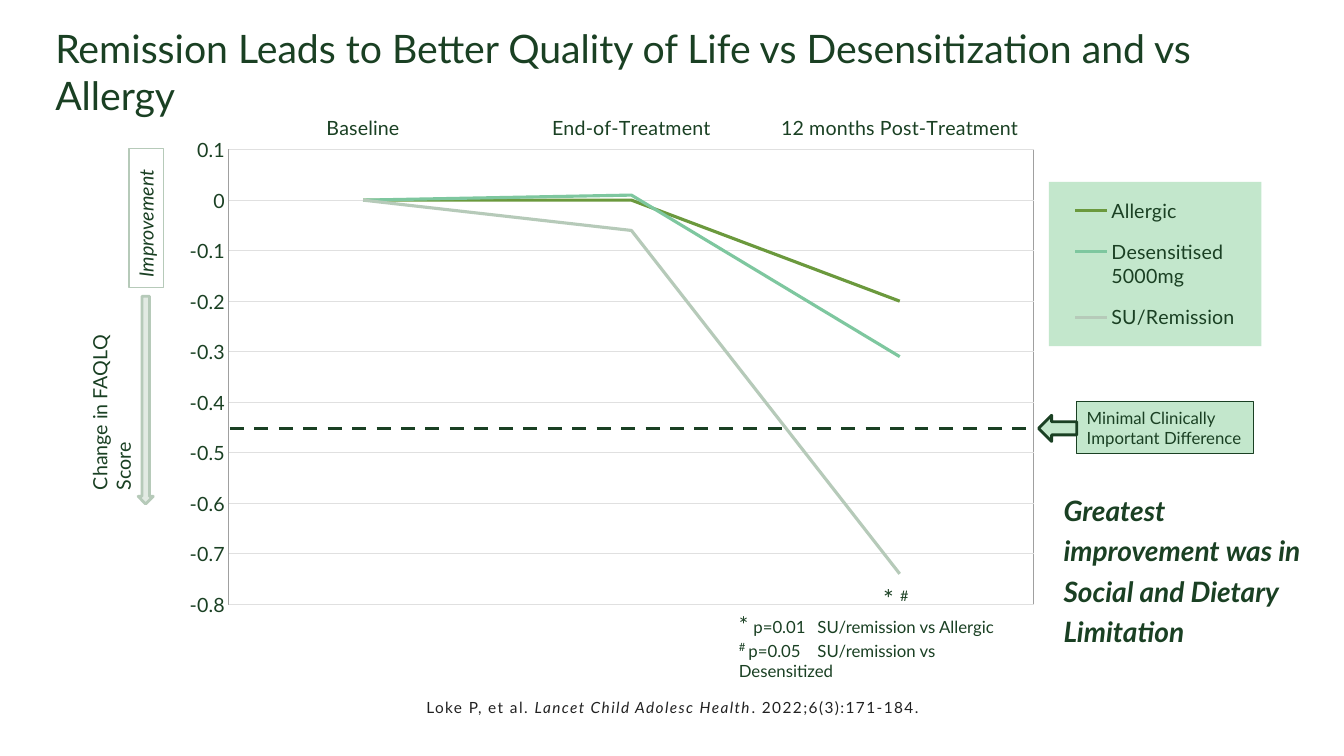
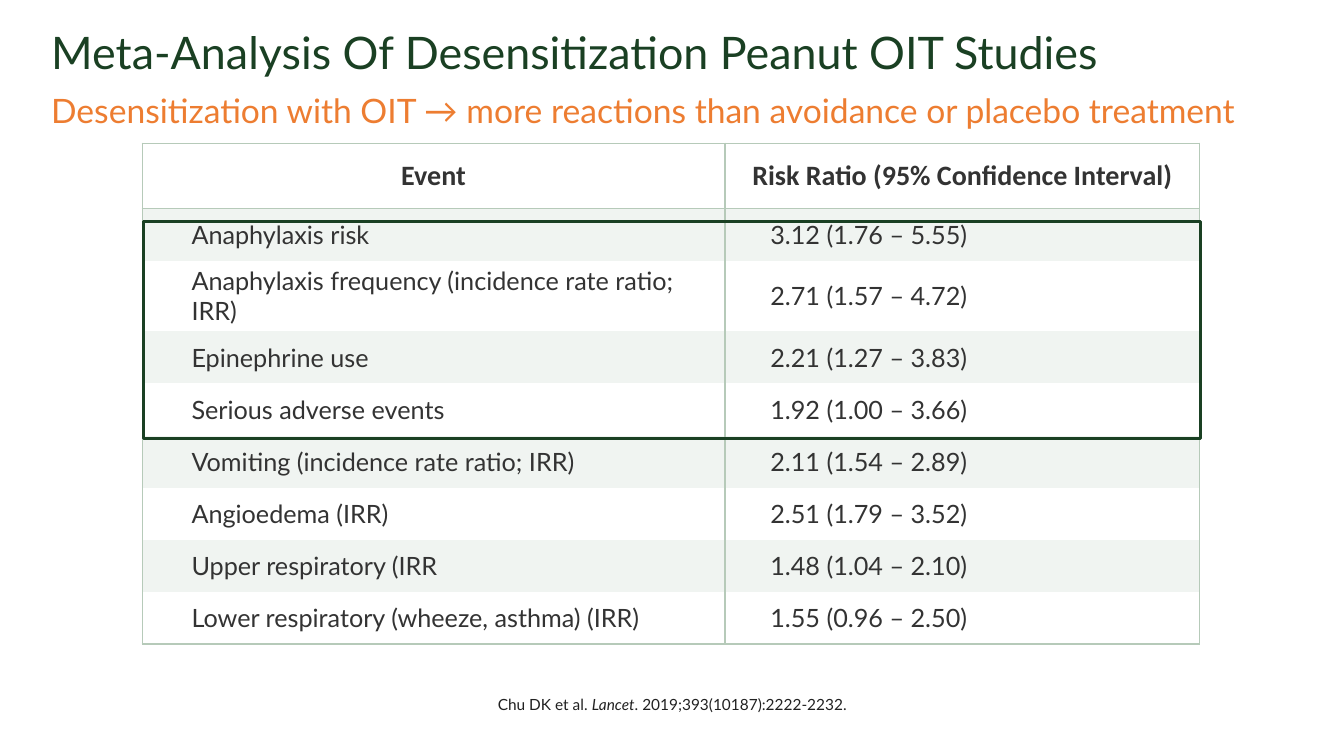
"""Two slides on food allergy: quality of life after treatment and risks of oral immunotherapy."""
import pptx
import pptx.chart.data
import pptx.dml.color
import pptx.enum.chart
import pptx.enum.dml
import pptx.enum.shapes
import pptx.enum.text
import pptx.oxml
import pptx.oxml.ns
import pptx.util

Inches = pptx.util.Inches
Pt = pptx.util.Pt
SHAPE = pptx.enum.shapes.MSO_SHAPE
ANCHOR = pptx.enum.text.MSO_ANCHOR
ALIGN = pptx.enum.text.PP_ALIGN
qn = pptx.oxml.ns.qn

FONT = "Lato"
COLORS = {
    "dark": "1A4023", "sage": "B6CAB9", "mint": "C3E7CC", "pale": "E2EAE3",
    "band": "F0F4F1", "white": "FFFFFF", "orange": "ED7D31", "body": "333333",
    "cite": "212121", "grid": "E0E0E0", "frame": "A0A0A0", "violet": "9591C7",
    "allergic": "6B993D", "desensitised": "7EC79F",
}

PERIODS = ["Baseline", "End-of-Treatment", "12 months Post-Treatment"]
SERIES = [
    ("Series 1", (None, None, None), "violet"),
    ("Allergic", (0, 0, -0.2), "allergic"),
    ("Desensitised 5000mg", (0, 0.01, -0.31), "desensitised"),
    ("SU/Remission", (0, -0.06, -0.74), "sage"),
]
CHART_PLACE = (1.12, 0.69, 11.39, 5.52)
PLOT_LAYOUT = (0.101, 0.144, 0.701, 0.817)
LEGEND_LAYOUT = (0.815, 0.202, 0.186, 0.295)

RAISED = {"baseline": "30000"}
MARKS = [[("* ", {}), ("#", RAISED)]]
P_VALUES = [
    [("*", {"sz": "1600"}), (" ", {"sz": "1400"}), ("p=0.01\tSU/remission vs Allergic", {})],
    [("# ", {"sz": "1400", **RAISED}), ("p=0.05\tSU/remission vs Desensitized", {})],
]
LOKE = ("Loke P, et al. ", "Lancet Child Adolesc Health", ". 2022;6(3):171-184.")
CHU = ("Chu DK et al. ", "Lancet", ". 2019;393(10187):2222-2232.")

EVENTS = [
    ("Event", "Risk Ratio (95% Confidence Interval)"),
    ("Anaphylaxis risk", "3.12 (1.76 – 5.55)"),
    ("Anaphylaxis frequency (incidence rate ratio; IRR)", "2.71 (1.57 – 4.72)"),
    ("Epinephrine use", "2.21 (1.27 – 3.83)"),
    ("Serious adverse events", "1.92 (1.00 – 3.66)"),
    ("Vomiting (incidence rate ratio; IRR)", "2.11 (1.54 – 2.89)"),
    ("Angioedema (IRR)", "2.51 (1.79 – 3.52)"),
    ("Upper respiratory (IRR", "1.48 (1.04 – 2.10)"),
    ("Lower respiratory (wheeze, asthma) (IRR)", "1.55 (0.96 – 2.50)"),
]
COLUMN_WIDTHS = (5.78, 4.71)
TABLE_HEIGHT, SPECIAL_HEIGHTS = 4.97, {0: 0.65, 2: 0.7}


def rgb(name):
    return pptx.dml.color.RGBColor.from_string(COLORS[name])


def place(values):
    return [Inches(value) for value in values]


def set_font(font, size, color="dark", name=FONT, bold=False, italic=False):
    font.name, font.size, font.bold, font.italic = name, Pt(size), bold, italic
    font.color.rgb = rgb(color)


def set_line(line, color, width):
    line.color.rgb = rgb(color)
    line.width = Pt(width)


def write(shape, paras, size, color="dark", bold=False, italic=False, align=ALIGN.LEFT,
          anchor=ANCHOR.TOP, spacing=None, tab=None):
    """Fill a shape with paragraphs, each a string or a list of (text, run attributes)."""
    frame = shape.text_frame
    frame.word_wrap = True
    frame.vertical_anchor = anchor
    for index, content in enumerate(paras):
        para = frame.paragraphs[0] if index == 0 else frame.add_paragraph()
        if tab:
            stops = para._p.get_or_add_pPr().makeelement(qn("a:tabLst"), {})
            stops.append(stops.makeelement(qn("a:tab"), {"pos": str(Inches(tab)), "algn": "l"}))
            para._p.get_or_add_pPr().append(stops)
        set_font(para.font, size, color, bold=bold, italic=italic)
        para.alignment = align
        if spacing:
            para.line_spacing = spacing
        for text, attributes in [(content, {})] if isinstance(content, str) else content:
            span = para.add_run()
            span.text = text
            for key, value in attributes.items():
                span._r.get_or_add_rPr().set(key, value)
    return shape


def add_text(page, where, paras, size, **style):
    return write(page.shapes.add_textbox(*place(where)), paras, size, **style)


def add_shape(page, kind, where, line, width, fill=None):
    shape = page.shapes.add_shape(kind, *place(where))
    shape.shadow.inherit = False
    if fill:
        shape.fill.solid()
        shape.fill.fore_color.rgb = rgb(fill)
    else:
        shape.fill.background()
    set_line(shape.line, line, width)
    return shape


def add_citation(page, where, parts, tracking="0"):
    before, journal, after = parts
    spaced = {"spc": tracking}
    runs = [(before, spaced), (journal, {"i": "1", **spaced}), (after, spaced)]
    add_text(page, where, [runs], 11, color="cite", align=ALIGN.CENTER, anchor=ANCHOR.MIDDLE)


def manual_layout(values, inner=False):
    target = '<c:layoutTarget val="inner"/>' if inner else ""
    modes = "".join(f'<c:{axis}Mode val="edge"/>' for axis in "xy")
    sizes = "".join(f'<c:{key} val="{value}"/>' for key, value in zip("xywh", values))
    return pptx.oxml.parse_xml(
        f'<c:layout {pptx.oxml.ns.nsdecls("c")}><c:manualLayout>{target}{modes}{sizes}'
        "</c:manualLayout></c:layout>")


def chart_format(fill=None, line=None):
    def paint(name):
        return f'<a:solidFill><a:srgbClr val="{COLORS[name]}"/></a:solidFill>' if name else "<a:noFill/>"
    return pptx.oxml.parse_xml(
        f'<c:spPr {pptx.oxml.ns.nsdecls("c", "a")}>{paint(fill)}'
        f'<a:ln w="9525">{paint(line)}</a:ln></c:spPr>')


def add_score_chart(page):
    data = pptx.chart.data.CategoryChartData()
    data.categories = PERIODS
    for name, values, _ in SERIES:
        data.add_series(name, values)
    chart = page.shapes.add_chart(
        pptx.enum.chart.XL_CHART_TYPE.LINE, *place(CHART_PLACE), data).chart
    chart.has_title = False
    set_font(chart.font, 14)
    for series, (_, _, color) in zip(chart.plots[0].series, SERIES):
        series.smooth = False
        series.marker.style = pptx.enum.chart.XL_MARKER_STYLE.NONE
        set_line(series.format.line, color, 2.25)
    chart.plots[0].vary_by_categories = False

    periods, scores = chart.category_axis, chart.value_axis
    for axis in (periods, scores):
        axis.major_tick_mark = axis.minor_tick_mark = pptx.enum.chart.XL_TICK_MARK.NONE
        set_font(axis.tick_labels.font, 14)
    periods.tick_label_position = pptx.enum.chart.XL_TICK_LABEL_POSITION.HIGH
    set_line(periods.format.line, "grid", 0.75)
    scores.minimum_scale, scores.maximum_scale, scores.major_unit = -0.8, 0.1, 0.1
    scores.format.line.fill.background()
    set_line(scores.major_gridlines.format.line, "grid", 0.75)

    area = chart.element.find(".//" + qn("c:plotArea"))
    for layout in area.findall(qn("c:layout")):
        area.remove(layout)
    area.insert(0, manual_layout(PLOT_LAYOUT, inner=True))
    area.append(chart_format(line="frame"))

    chart.has_legend = True
    legend = chart.legend
    legend.position = pptx.enum.chart.XL_LEGEND_POSITION.RIGHT
    legend.include_in_layout = False
    set_font(legend.font, 14)
    overlay = chart.element.find(".//" + qn("c:legend")).find(qn("c:overlay"))
    overlay.addprevious(pptx.oxml.parse_xml(
        f'<c:legendEntry {pptx.oxml.ns.nsdecls("c")}><c:idx val="0"/><c:delete val="1"/></c:legendEntry>'))
    overlay.addprevious(manual_layout(LEGEND_LAYOUT))
    overlay.addnext(chart_format(fill="mint"))


def set_borders(cell, drawn):
    properties = cell._tc.get_or_add_tcPr()
    for side in "LRTB":
        paint = (f'<a:solidFill><a:srgbClr val="{COLORS["sage"]}"/></a:solidFill>'
                 if side in drawn else "<a:noFill/>")
        properties.append(pptx.oxml.parse_xml(
            f'<a:ln{side} {pptx.oxml.ns.nsdecls("a")} w="12700">{paint}</a:ln{side}>'))


def add_event_table(page, left, top):
    plain_rows = len(EVENTS) - len(SPECIAL_HEIGHTS)
    plain_height = (TABLE_HEIGHT - sum(SPECIAL_HEIGHTS.values())) / plain_rows
    table = page.shapes.add_table(
        len(EVENTS), len(COLUMN_WIDTHS),
        *place((left, top, sum(COLUMN_WIDTHS), TABLE_HEIGHT))).table
    table.first_row = table.horz_banding = False
    for column, width in zip(table.columns, COLUMN_WIDTHS):
        column.width = Inches(width)
    for row, texts in enumerate(EVENTS):
        table.rows[row].height = Inches(SPECIAL_HEIGHTS.get(row, plain_height))
        header = row == 0
        drawn = "LR" + ("T" if row < 2 else "") + ("B" if row in (0, len(EVENTS) - 1) else "")
        for index, text in enumerate(texts):
            cell = table.cell(row, index)
            set_borders(cell, drawn)
            cell.fill.solid()
            cell.fill.fore_color.rgb = rgb("band" if row % 2 else "white")
            cell.vertical_anchor = ANCHOR.MIDDLE
            cell.text = text
            para = cell.text_frame.paragraphs[0]
            if header:
                para.alignment = ALIGN.CENTER
                set_font(para.font, 20, "body", name="Calibri", bold=True)
            else:
                cell.margin_left = Inches((0.49, 0.45)[index])
                set_font(para.font, 18, "body")


def build_quality_slide(page):
    add_text(page, (0.45, 0.19, 12.73, 1.03),
             ["Remission Leads to Better Quality of Life vs Desensitization and vs Allergy"], 28)
    add_score_chart(page)

    improvement = add_shape(page, SHAPE.RECTANGLE, (0.76, 1.99, 1.38, 0.34), "sage", 0.75)
    write(improvement, ["Improvement"], 14, italic=True)
    score = add_text(page, (0, 3.57, 2.21, 0.57), ["Change in FAQLQ Score"], 14)
    improvement.rotation = score.rotation = 270
    add_shape(page, SHAPE.DOWN_ARROW, (1.37, 2.94, 0.15, 2.06), "sage", 2, "pale")

    threshold = page.shapes.add_connector(
        pptx.enum.shapes.MSO_CONNECTOR.STRAIGHT, *place((2.28, 4.25, 10.24, 4.25)))
    set_line(threshold.line, "dark", 2.5)
    threshold.line.dash_style = pptx.enum.dml.MSO_LINE.DASH
    properties = threshold._element.spPr
    properties.append(properties.makeelement(qn("a:effectLst"), {}))
    difference = add_shape(page, SHAPE.RECTANGLE, (10.68, 3.98, 1.75, 0.52), "dark", 0.75, "mint")
    write(difference, ["Minimal Clinically Important Difference"], 12, anchor=ANCHOR.MIDDLE)
    add_shape(page, SHAPE.LEFT_ARROW, (10.3, 4.12, 0.38, 0.26), "dark", 2, "mint")

    add_text(page, (8.66, 5.74, 0.5, 0.4), MARKS, 18)
    add_text(page, (7.23, 6.01, 3.07, 0.8), P_VALUES, 12, tab=0.78)
    add_text(page, (10.45, 4.78, 2.64, 1.69),
             ["Greatest improvement was in Social and Dietary Limitation"], 20,
             bold=True, italic=True, spacing=1.2)
    add_citation(page, (3.87, 6.83, 5.6, 0.38), LOKE, tracking="100")


def build_risk_slide(page):
    add_text(page, (0.41, 0.26, 12.51, 0.85),
             ["Meta-Analysis Of Desensitization Peanut OIT Studies"], 32, spacing=0.9)
    add_text(page, (0.41, 0.84, 12.53, 0.5),
             ["Desensitization with OIT → more reactions than avoidance or placebo treatment"],
             24, color="orange")
    add_event_table(page, 1.41, 1.42)
    add_shape(page, SHAPE.RECTANGLE, (1.42, 2.2, 10.49, 2.15), "dark", 2.25)
    add_citation(page, (1.65, 6.84, 10.04, 0.29), CHU)


def main():
    deck = pptx.Presentation()
    deck.slide_width, deck.slide_height = Inches(13.33), Inches(7.5)
    for build in (build_quality_slide, build_risk_slide):
        build(deck.slides.add_slide(deck.slide_layouts[6]))
    deck.save("out.pptx")


if __name__ == "__main__":
    main()
